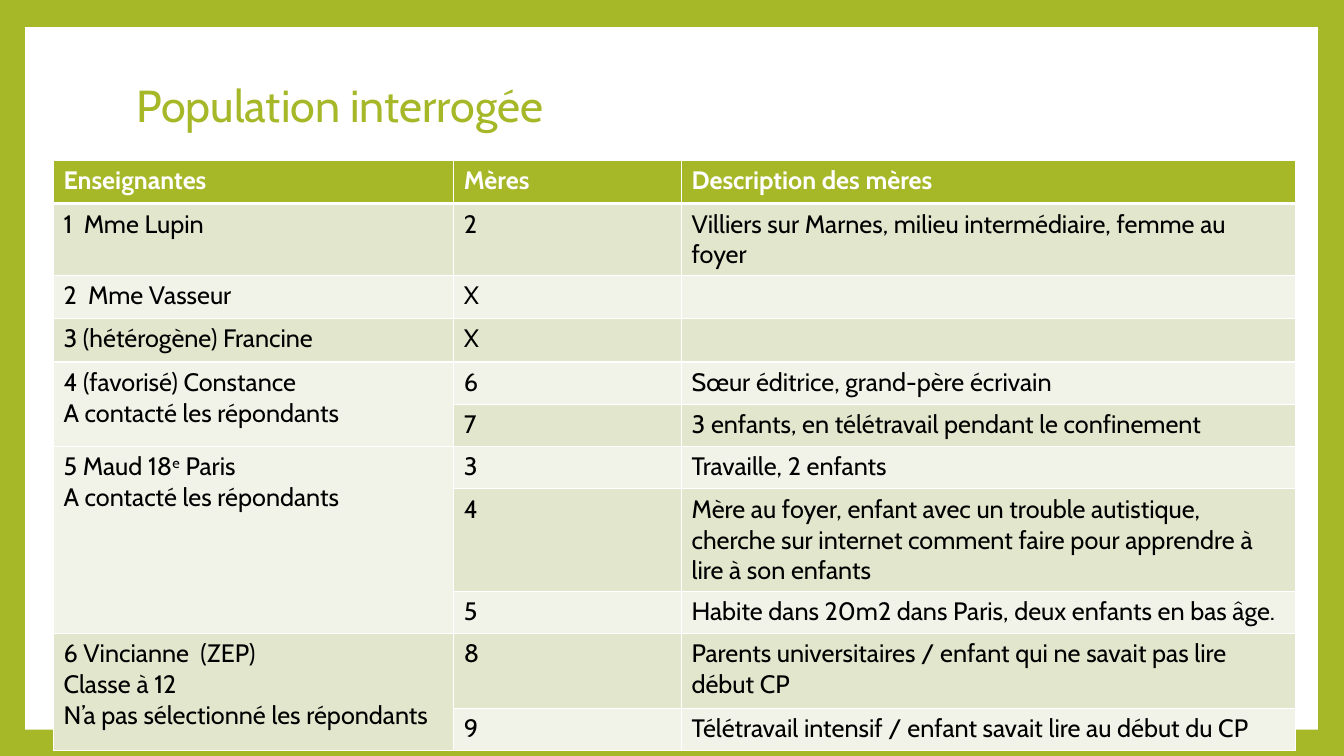
"""Builds the slide listing the teachers and mothers who were interviewed."""
import pptx
import pptx.dml.color
import pptx.enum.shapes
import pptx.enum.text
import pptx.oxml
import pptx.oxml.ns
import pptx.util

PX = 9144
COLORS = {"green": "A6B727", "white": "FFFFFF", "black": "000000",
          "odd": "E1E6CD", "even": "F1F3E8"}
COLUMN_WIDTHS = [397, 226, 609]
ROW_HEIGHTS = [43, 43, 43, 43, 42, 42, 42, 95, 42, 74, 42]
ROWS = [
    ("Enseignantes", "Mères", "Description des mères"),
    ("1  Mme Lupin", "2", "Villiers sur Marnes, milieu intermédiaire, femme au foyer"),
    ("2  Mme Vasseur", "X", ""),
    ("3 (hétérogène) Francine", "X", ""),
    ("4 (favorisé) Constance\nA contacté les répondants", "6",
     "Sœur éditrice, grand-père écrivain"),
    ("", "7", "3 enfants, en télétravail pendant le confinement"),
    ("5 Maud 18^e^ Paris\nA contacté les répondants", "3", "Travaille, 2 enfants"),
    ("", "4", "Mère au foyer, enfant avec un trouble autistique, cherche sur "
              "internet comment faire pour apprendre à lire à son enfants"),
    ("", "5", "Habite dans 20m2 dans Paris, deux enfants en bas âge."),
    ("6 Vincianne  (ZEP)\nClasse à 12\nN’a pas sélectionné les répondants", "8",
     "Parents universitaires / enfant qui ne savait pas lire début CP"),
    ("", "9", "Télétravail intensif / enfant savait lire au début du CP"),
]
TEACHER_SPANS = [(4, 5), (6, 8), (9, 10)]


def rgb(name):
    return pptx.dml.color.RGBColor.from_string(COLORS[name])


def style_font(font, color, size, bold=False):
    formats = {"name": "Cabin", "size": pptx.util.Pt(size), "bold": bold}
    for attribute, value in formats.items():
        setattr(font, attribute, value)
    font.color.rgb = rgb(color)


deck = pptx.Presentation()
deck.slide_width, deck.slide_height = 1333 * PX, 750 * PX
slide = deck.slides.add_slide(deck.slide_layouts[5])
slide.background.fill.solid()
slide.background.fill.fore_color.rgb = rgb("green")

panel = slide.shapes.add_shape(pptx.enum.shapes.MSO_SHAPE.RECTANGLE,
                               25 * PX, 27 * PX, 1282 * PX, 697 * PX)
panel.shadow.inherit = False
panel.fill.solid()
panel.fill.fore_color.rgb = rgb("white")
panel.line.fill.background()
slide.shapes._spTree.insert(2, panel._element)

title = slide.shapes.title
for attribute, value in {"left": 125, "top": 67, "width": 1084, "height": 80}.items():
    setattr(title, attribute, value * PX)
title.text_frame.text = "Population interrogée"
title.text_frame.auto_size = pptx.enum.text.MSO_AUTO_SIZE.NONE
title.text_frame.vertical_anchor = pptx.enum.text.MSO_ANCHOR.MIDDLE
heading = title.text_frame.paragraphs[0]
heading.alignment = pptx.enum.text.PP_ALIGN.LEFT
heading.line_spacing = 0.9
style_font(heading.runs[0].font, "green", 32)

table = slide.shapes.add_table(
    len(ROWS), len(COLUMN_WIDTHS), 53 * PX, 159 * PX,
    sum(COLUMN_WIDTHS) * PX, sum(ROW_HEIGHTS) * PX).table
for column, width in zip(table.columns, COLUMN_WIDTHS):
    column.width = width * PX
for row, height in zip(table.rows, ROW_HEIGHTS):
    row.height = height * PX
for first, last in TEACHER_SPANS:
    table.cell(first, 0).merge(table.cell(last, 0))

for row_index, texts in enumerate(ROWS):
    header = row_index == 0
    band = "green" if header else "odd" if row_index % 2 else "even"
    text_color = "white" if header else "black"
    border_widths = {"lnL": 1, "lnR": 1, "lnT": 3 if row_index == 1 else 1,
                     "lnB": 3 if header else 1}
    for column_index, text in enumerate(texts):
        cell = table.cell(row_index, column_index)
        cell.fill.solid()
        cell.fill.fore_color.rgb = rgb(band)
        for line_index, line in enumerate(text.split("\n")):
            paragraphs = cell.text_frame.paragraphs
            paragraph = cell.text_frame.add_paragraph() if line_index else paragraphs[0]
            style_font(paragraph.font, text_color, 18, header)
            for part_index, part in enumerate(line.split("^")):
                if part:
                    run = paragraph.add_run()
                    run.text = part
                    style_font(run.font, text_color, 18, header)
                    if part_index % 2:
                        run.font._element.set("baseline", "30000")
            if not line:
                paragraph._p.get_or_add_endParaRPr().set("sz", "1800")
        properties = cell._tc.get_or_add_tcPr()
        for position, (side, width) in enumerate(border_widths.items()):
            properties.insert(position, pptx.oxml.parse_xml(
                f'<a:{side} {pptx.oxml.ns.nsdecls("a")} w="{pptx.util.Pt(width)}">'
                f'<a:solidFill><a:srgbClr val="{COLORS["white"]}"/></a:solidFill>'
                f'</a:{side}>'))

deck.save("out.pptx")
